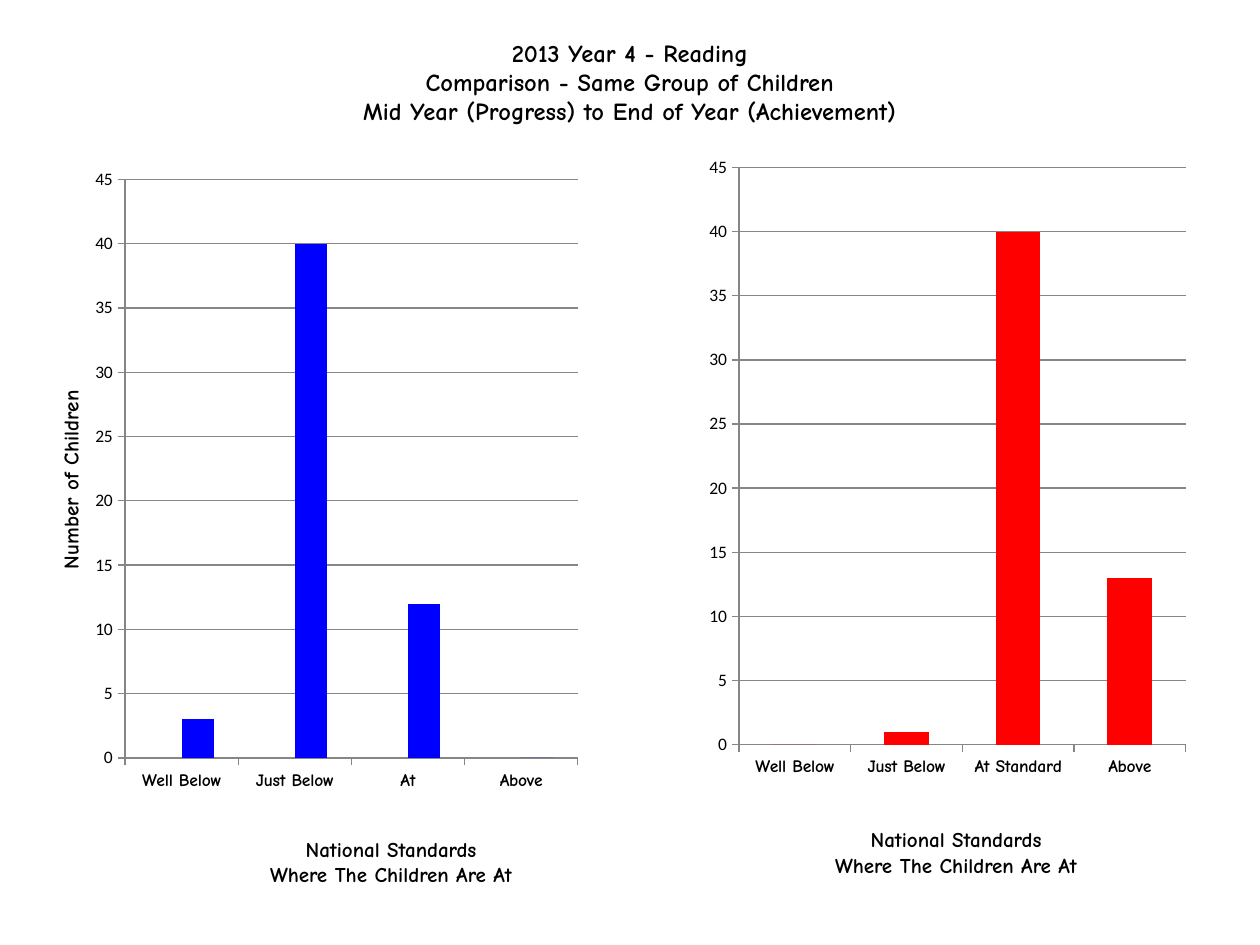
from dataclasses import dataclass

from lxml.etree import SubElement
from pptx import Presentation
from pptx.chart.data import CategoryChartData
from pptx.dml.color import RGBColor
from pptx.enum.chart import XL_CHART_TYPE, XL_TICK_MARK
from pptx.enum.text import MSO_ANCHOR, PP_ALIGN
from pptx.oxml.ns import qn
from pptx.util import Cm, Pt


@dataclass(frozen=True)
class Theme:
    heading_font: str = "Comic Neue"
    number_font: str = "Calibri"
    title_size: Pt = Pt(14)
    label_size: Pt = Pt(12)
    axis_size: Pt = Pt(10)
    text: RGBColor = RGBColor(0x00, 0x00, 0x00)
    grid: RGBColor = RGBColor(0x86, 0x86, 0x86)
    unused: RGBColor = RGBColor(0x4F, 0x81, 0xBD)
    mid_year: RGBColor = RGBColor(0x00, 0x00, 0xFF)
    end_of_year: RGBColor = RGBColor(0xFF, 0x00, 0x00)


THEME = Theme()


def style_heading(font, size):
    font.name = THEME.heading_font
    font.size = size
    font.bold = True
    font.color.rgb = THEME.text


def add_centred_text(slide, box, lines, size, inset=Cm(0.13)):
    shape = slide.shapes.add_textbox(*map(Cm, box))
    frame = shape.text_frame
    frame.word_wrap = True
    frame.vertical_anchor = MSO_ANCHOR.TOP
    frame.margin_top = frame.margin_bottom = inset
    frame.text = "\n".join(lines)
    for paragraph in frame.paragraphs:
        paragraph.alignment = PP_ALIGN.CENTER
        style_heading(paragraph.font, size)


def set_plot_layout(chart, x, y, width, height):
    """Fix the inner plot area, as fractions of the chart."""
    plot_area = chart._chartSpace.find(".//" + qn("c:plotArea"))
    for old_layout in plot_area.findall(qn("c:layout")):
        plot_area.remove(old_layout)
    layout = SubElement(plot_area, qn("c:layout"))
    plot_area.insert(0, layout)
    manual = SubElement(layout, qn("c:manualLayout"))
    settings = {"layoutTarget": "inner", "xMode": "edge", "yMode": "edge",
                "x": x, "y": y, "w": width, "h": height}
    for name, value in settings.items():
        SubElement(manual, qn(f"c:{name}")).set("val", str(value))


def add_column_chart(slide, box, categories, series_list):
    """series_list holds (name, values, colour) for each series."""
    data = CategoryChartData()
    data.categories = categories
    for name, values, _ in series_list:
        data.add_series(name, values)
    chart = slide.shapes.add_chart(
        XL_CHART_TYPE.COLUMN_CLUSTERED, *map(Cm, box), data).chart
    chart.has_legend = False
    chart.has_title = False
    chart.font.name = THEME.number_font
    chart.font.size = THEME.axis_size
    chart.font.color.rgb = THEME.text

    # Columns
    plot = chart.plots[0]
    plot.gap_width = 150
    plot.vary_by_categories = False
    for series, (_, _, colour) in zip(plot.series, series_list):
        series.invert_if_negative = False
        series.format.fill.solid()
        series.format.fill.fore_color.rgb = colour

    # Axes and gridlines
    value_axis = chart.value_axis
    value_axis.minimum_scale, value_axis.maximum_scale = 0, 45
    value_axis.major_unit = 5
    value_axis.has_major_gridlines = True
    for axis in (chart.category_axis, value_axis):
        axis.major_tick_mark = XL_TICK_MARK.OUTSIDE
        axis.minor_tick_mark = XL_TICK_MARK.NONE
        axis.format.line.color.rgb = THEME.grid
    value_axis.major_gridlines.format.line.color.rgb = THEME.grid
    style_heading(chart.category_axis.tick_labels.font, THEME.axis_size)
    return chart


def add_value_title(chart, text):
    frame = chart.value_axis.axis_title.text_frame
    frame.text = text
    style_heading(frame.paragraphs[0].font, THEME.label_size)


def main():
    presentation = Presentation()
    presentation.slide_width, presentation.slide_height = Cm(25.4), Cm(19.05)
    slide = presentation.slides.add_slide(presentation.slide_layouts[6])

    # Title
    add_centred_text(
        slide, (1.27, 0.76, 22.86, 2.36),
        ["2013 Year 4 - Reading", "Comparison - Same Group of Children",
         "Mid Year (Progress) to End of Year (Achievement)"],
        THEME.title_size, inset=0)

    # End of year, on the right
    add_column_chart(
        slide, (14.1, 2.92, 10, 13),
        ["Well Below", "Just Below", "At Standard", "Above"],
        [("Series 1", [0, 1, 40, 13], THEME.end_of_year)])

    # Mid year, on the left; the empty first series shifts the columns
    mid_year_chart = add_column_chart(
        slide, (1.09, 3.33, 11, 14.4),
        ["Well Below", "Just Below", "At", "Above"],
        [("Series 1", [None] * 4, THEME.unused),
         ("Series 2", [3, 40, 12, 0], THEME.mid_year)])
    add_value_title(mid_year_chart, "Number of Children")
    set_plot_layout(mid_year_chart, 0.13, 0.02, 0.83, 0.81)

    # Captions under the charts
    for box in ((16.1, 16.54, 6.35, 1.27), (4.29, 16.74, 7.19, 1.27)):
        add_centred_text(
            slide, box, ["National Standards", "Where The Children Are At"],
            THEME.label_size)

    presentation.save("out.pptx")


if __name__ == "__main__":
    main()
